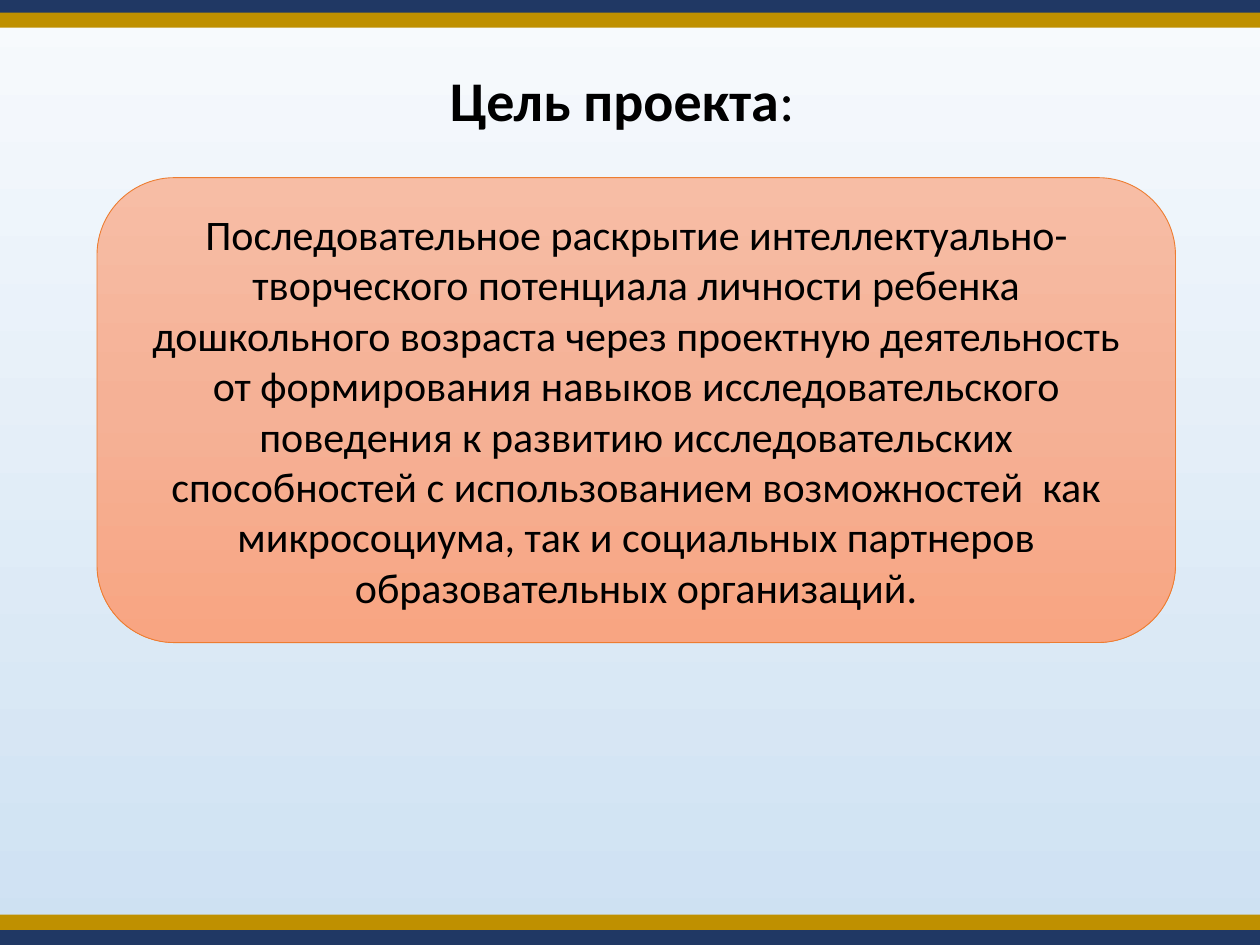
from copy import deepcopy
from dataclasses import dataclass

from pptx import Presentation
from pptx.dml.color import RGBColor as Rgb
from pptx.dml.fill import FillFormat as Fill
from pptx.enum.shapes import MSO_SHAPE as Kind
from pptx.enum.text import MSO_ANCHOR as Anchor, MSO_AUTO_SIZE as Fit, PP_ALIGN as Align
from pptx.oxml.ns import qn
from pptx.shapes.autoshape import Shape
from pptx.slide import Slide
from pptx.text.text import TextFrame as Frame
from pptx.util import Inches, Pt

HUES = {
    "navy": "203864", "gold": "BF9000", "black": "000000", "edge": "ED7D31",
    "sky top": "F7FAFD", "sky end": "CEE1F2",
    "peach top": "F7BDA5", "peach mid": "F5B196", "peach end": "F8A582",
}
WIDE, HIGH, BAND = 10, 7.5, 0.12
GOAL = (
    "Последовательное раскрытие интеллектуально-творческого потенциала личности "
    "ребенка дошкольного возраста через проектную деятельность от формирования "
    "навыков исследовательского поведения к развитию исследовательских способностей "
    "с использованием возможностей  как микросоциума, так и социальных партнеров "
    "образовательных организаций."
)


@dataclass
class Stripe:
    top: float
    hue: str


@dataclass
class Span:
    text: str
    size: int
    bold: bool = False


STRIPES = [
    Stripe(0, "navy"),
    Stripe(0.1, "gold"),
    Stripe(HIGH - BAND, "navy"),
    Stripe(HIGH - 2 * BAND, "gold"),
]


def tone(name: str) -> Rgb:
    return Rgb.from_string(HUES[name])


def blend(fill: Fill, names: list[str]) -> None:
    """Fill from top to bottom with evenly spaced colours."""
    fill.gradient()
    fill.gradient_angle = 270
    stops = fill.gradient_stops
    first = stops[0]._gs
    for _ in names[2:]:
        first.addnext(deepcopy(first))
    for i, (stop, name) in enumerate(zip(fill.gradient_stops, names)):
        stop.position = i / (len(names) - 1)
        stop.color.rgb = tone(name)


def add_box(slide: Slide, kind: Kind, box: tuple[float, ...]) -> Shape:
    shape = slide.shapes.add_shape(kind, *map(Inches, box))
    shape.shadow.inherit = False
    return shape


def add_stripe(slide: Slide, stripe: Stripe) -> None:
    bar = add_box(slide, Kind.RECTANGLE, (0, stripe.top, WIDE, BAND))
    bar.fill.solid()
    bar.fill.fore_color.rgb = tone(stripe.hue)
    bar.line.fill.background()


def write(frame: Frame, spans: list[Span], align: Align, anchor: Anchor) -> None:
    looks = {"word_wrap": True, "auto_size": Fit.NONE, "vertical_anchor": anchor}
    for key, value in looks.items():
        setattr(frame, key, value)
    para = frame.paragraphs[0]
    para.alignment = align
    for span in spans:
        run = para.add_run()
        run.text = span.text
        style = {"name": "Calibri", "size": Pt(span.size), "bold": span.bold}
        for key, value in style.items():
            setattr(run.font, key, value)
        run.font.color.rgb = tone("black")


def add_title(slide: Slide) -> None:
    title = slide.shapes.title
    place = {"left": 3.47, "top": 0.47, "width": 3.06, "height": 0.64}
    for key, value in place.items():
        setattr(title, key, Inches(value))
    spans = [Span("Цель проекта", 32, True), Span(":", 32)]
    write(title.text_frame, spans, Align.LEFT, Anchor.TOP)


def add_goal(slide: Slide) -> None:
    card = add_box(slide, Kind.ROUNDED_RECTANGLE, (0.77, 1.41, 8.56, 3.69))
    blend(card.fill, ["peach top", "peach mid", "peach end"])
    card.line.color.rgb = tone("edge")
    card.line.width = Pt(0.5)
    write(card.text_frame, [Span(GOAL, 24)], Align.CENTER, Anchor.MIDDLE)


def main() -> None:
    deck = Presentation()
    deck.slide_width, deck.slide_height = Inches(WIDE), Inches(HIGH)
    slide = deck.slides.add_slide(deck.slide_layouts[5])
    blend(slide.background.fill, ["sky top", "sky end"])
    for stripe in STRIPES:
        add_stripe(slide, stripe)
    add_goal(slide)
    add_title(slide)
    deck.save("out.pptx")


if __name__ == "__main__":
    main()
